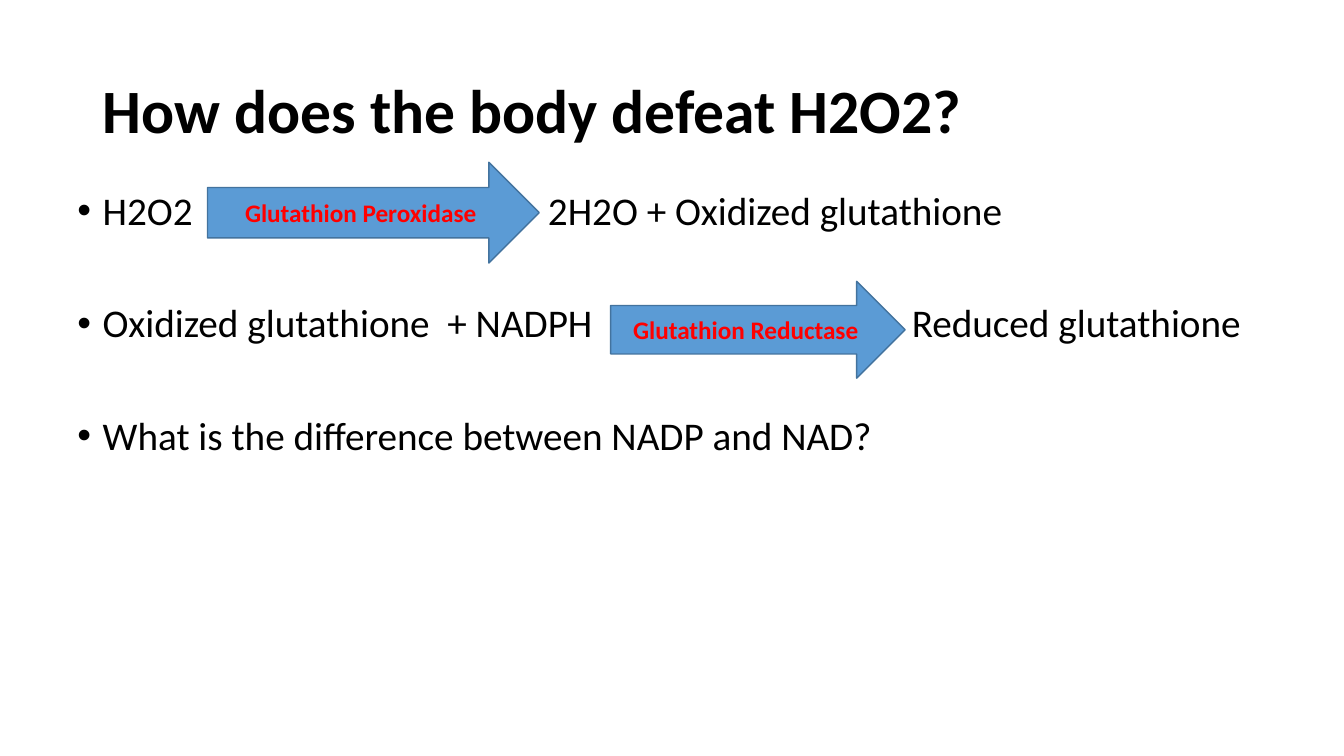
import pptx
import pptx.util
import pptx.dml.color
import pptx.enum.shapes
import pptx.enum.text
import pptx.oxml.ns
import lxml.etree
from pptx.util import Cm, Pt

BLACK = pptx.dml.color.RGBColor(0x00, 0x00, 0x00)
RED = pptx.dml.color.RGBColor(0xFF, 0x00, 0x00)
ARROW_FILL = pptx.dml.color.RGBColor(0x5B, 0x9B, 0xD5)
ARROW_LINE = pptx.dml.color.RGBColor(0x43, 0x73, 0x9E)
FONT = "Calibri"
INDENT = Cm(0.64)

STATEMENTS = [
    ("H2O2\t2H2O + Oxidized glutathione", Cm(11.86)),
    ("Oxidized glutathione  + NADPH\tReduced glutathione", Cm(21.03)),
    ("What is the difference between NADP and NAD?", None),
]
ENZYMES = [
    ("Glutathion Peroxidase", (Cm(3.53), Cm(-0.61), Cm(8.36), Cm(2.54))),
    ("Glutathion Reductase", (Cm(13.69), Cm(2.39), Cm(7.42), Cm(2.44))),
]


def format_para(para, size, color, bold=False):
    for span in para.runs:
        span.font.name = FONT
        span.font.size = Pt(size)
        span.font.bold = bold
        span.font.color.rgb = color


def place(shape, box):
    shape.left, shape.top, shape.width, shape.height = box


def add_title(page, box):
    title = page.shapes.title
    place(title, box)
    frame = title.text_frame
    frame.text = "How does the body defeat H2O2?"
    frame.vertical_anchor = pptx.enum.text.MSO_ANCHOR.MIDDLE
    para = frame.paragraphs[0]
    para.alignment = pptx.enum.text.PP_ALIGN.LEFT
    para.line_spacing = 0.9
    format_para(para, 44, BLACK, bold=True)


def add_bullet(para, tab):
    properties = para._p.get_or_add_pPr()
    properties.set("marL", str(INDENT))
    properties.set("indent", str(-INDENT))
    qn = pptx.oxml.ns.qn
    lxml.etree.SubElement(properties, qn("a:buFont"), typeface="Arial")
    lxml.etree.SubElement(properties, qn("a:buChar"), char="•")
    if tab:
        tabs = lxml.etree.SubElement(properties, qn("a:tabLst"))
        lxml.etree.SubElement(tabs, qn("a:tab"), pos=str(tab), algn="l")


def add_statements(page, box):
    frame = page.shapes.add_textbox(*box).text_frame
    frame.word_wrap = True
    frame.text = "\n".join(text for text, tab in STATEMENTS)
    for index, (para, (text, tab)) in enumerate(zip(frame.paragraphs, STATEMENTS)):
        para.line_spacing = 0.9
        para.space_before = Pt(50 if index else 10)
        add_bullet(para, tab)
        format_para(para, 28, BLACK)


def add_enzyme_arrow(page, name, box):
    arrow = page.shapes.add_shape(pptx.enum.shapes.MSO_SHAPE.RIGHT_ARROW, *box)
    arrow.shadow.inherit = False
    arrow.fill.solid()
    arrow.fill.fore_color.rgb = ARROW_FILL
    arrow.line.color.rgb = ARROW_LINE
    arrow.line.width = Pt(1)
    frame = arrow.text_frame
    frame.text = name
    frame.vertical_anchor = pptx.enum.text.MSO_ANCHOR.MIDDLE
    para = frame.paragraphs[0]
    para.alignment = pptx.enum.text.PP_ALIGN.CENTER
    format_para(para, 18, RED, bold=True)


def add_reactions(page, box):
    left, top, width, height = box
    add_statements(page, box)
    for name, (x, y, arrow_width, arrow_height) in ENZYMES:
        add_enzyme_arrow(page, name, (left + x, top + y, arrow_width, arrow_height))


def main():
    deck = pptx.Presentation()
    deck.slide_width = Cm(33.87)
    deck.slide_height = Cm(19.05)
    page = deck.slides.add_slide(deck.slide_layouts.get_by_name("Title Only"))
    add_title(page, (Cm(2.34), Cm(1.02), Cm(29.21), Cm(3.68)))
    add_reactions(page, (Cm(1.7), Cm(4.7), Cm(30.73), Cm(12.09)))
    deck.save("out.pptx")


if __name__ == "__main__":
    main()
